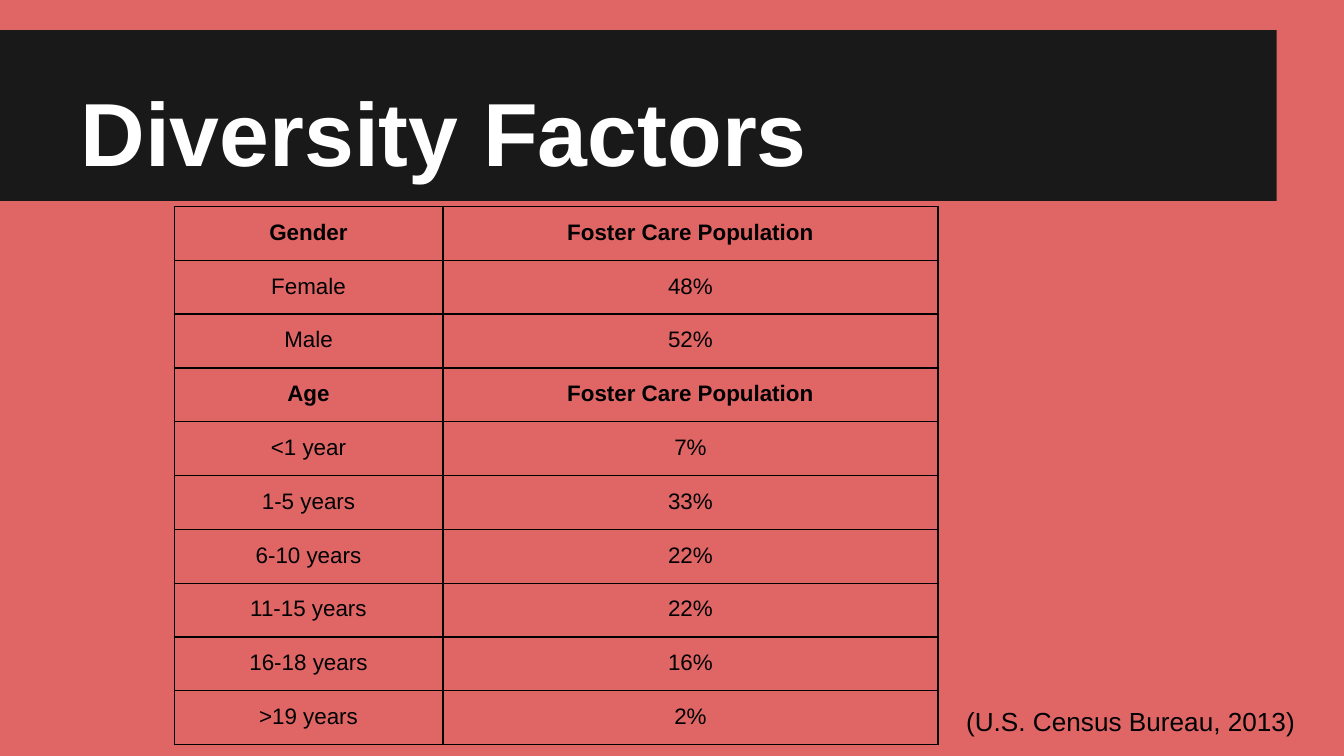
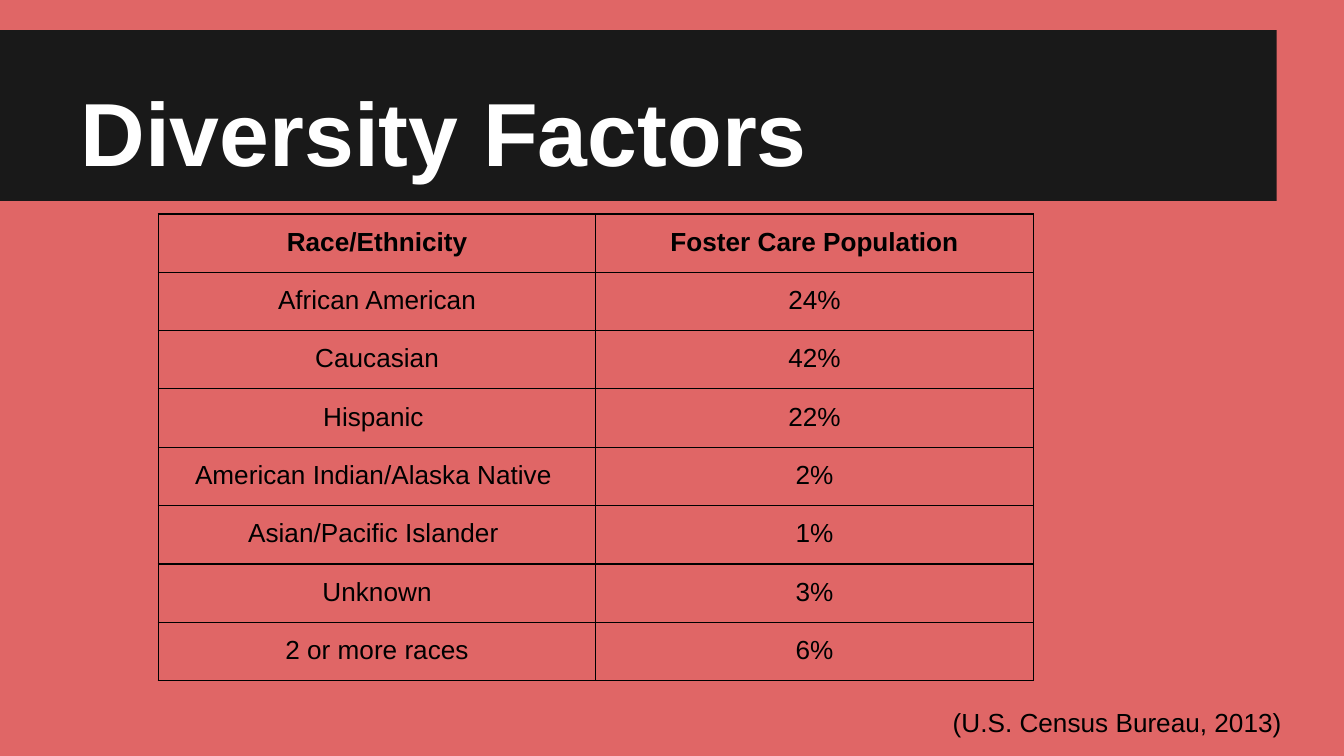
from lxml.etree import SubElement
from pptx import Presentation
from pptx.dml.color import RGBColor
from pptx.enum.shapes import MSO_SHAPE
from pptx.enum.text import MSO_ANCHOR, PP_ALIGN
from pptx.oxml.ns import qn
from pptx.util import Pt

# Content
TITLE = "Diversity Factors"
SOURCE = "(U.S. Census Bureau, 2013)"
SHARE = "Foster Care Population"
PAGES = [
    {
        "rows": [
            ("Gender", SHARE), ("Female", "48%"), ("Male", "52%"),
            ("Age", SHARE), ("<1 year", "7%"), ("1-5 years", "33%"),
            ("6-10 years", "22%"), ("11-15 years", "22%"),
            ("16-18 years", "16%"), (">19 years", "2%"),
        ],
        "at": (93.3, 110.6), "cols": (144, 265.2),
        "high": 27.8, "tall": {}, "size": 12,
        "note": (510.5, 370.8, 204.5, 30.2),
    },
    {
        "rows": [
            ("Race/Ethnicity", SHARE), ("African American", "24%"),
            ("Caucasian", "42%"), ("Hispanic ", "22%"),
            ("American Indian/Alaska Native ", "2%"),
            ("Asian/Pacific Islander ", "1%"), ("Unknown", "3%"),
            ("2 or more races", "6%"),
        ],
        "at": (84.8, 114.6), "cols": (234.4, 234.4),
        "high": 30, "tall": {4: 31.3, 5: 31.3}, "size": 14,
        "note": (503.3, 371, 195.8, 33.8),
    },
]

# Shared look
BACK, BAND, INK, WHITE = "E06666", "191919", "000000", "FFFFFF"
SIDES = ("a:lnL", "a:lnR", "a:lnT", "a:lnB")
PAD = {f"margin_{side}": Pt(7.2) for side in ("left", "top", "right", "bottom")}


def paint(fill, color):
    fill.solid()
    fill.fore_color.rgb = RGBColor.from_string(color)


def apply(item, form):
    for name, value in form.items():
        setattr(item, name, value)


def write(frame, text, size, color=INK, bold=False, align=PP_ALIGN.LEFT):
    line = frame.paragraphs[0]
    line.alignment = align
    run = line.add_run()
    run.text = text
    apply(run.font, {"name": "Arial", "size": Pt(size), "bold": bold})
    run.font.color.rgb = RGBColor.from_string(color)


def add_text(slide, box, text, size, anchor=MSO_ANCHOR.TOP, **form):
    frame = slide.shapes.add_textbox(*map(Pt, box)).text_frame
    apply(frame, {"word_wrap": True, "vertical_anchor": anchor, **PAD})
    write(frame, text, size, **form)


def add_edges(cell):
    props = cell._tc.get_or_add_tcPr()
    for side in SIDES:
        edge = SubElement(props, qn(side), w=str(Pt(0.75)))
        fill = SubElement(edge, qn("a:solidFill"))
        SubElement(fill, qn("a:srgbClr"), val=INK)


def add_grid(slide, page):
    rows, cols = page["rows"], page["cols"]
    highs = [page["tall"].get(i, page["high"]) for i in range(len(rows))]
    box = (*page["at"], sum(cols), sum(highs))
    grid = slide.shapes.add_table(len(rows), len(cols), *map(Pt, box)).table
    apply(grid, {"first_row": False, "horz_banding": False})
    for col, width in zip(grid.columns, cols):
        col.width = Pt(width)
    for row, high, texts in zip(grid.rows, highs, rows):
        row.height = Pt(high)
        for cell, text in zip(row.cells, texts):
            add_edges(cell)
            cell.fill.background()
            apply(cell, PAD)
            write(cell.text_frame, text, page["size"],
                  bold=texts[1] == SHARE, align=PP_ALIGN.CENTER)


def add_page(deck, page):
    slide = deck.slides.add_slide(deck.slide_layouts[6])
    paint(slide.background.fill, BACK)
    # Title band
    band = slide.shapes.add_shape(
        MSO_SHAPE.RECTANGLE, *map(Pt, (0, 16.2, 684, 91.5)))
    band.shadow.inherit = False
    paint(band.fill, BAND)
    band.line.fill.background()
    add_text(slide, (36, 16.2, 648, 90), TITLE, 48,
             anchor=MSO_ANCHOR.BOTTOM, color=WHITE, bold=True)
    # Table and source note
    add_grid(slide, page)
    add_text(slide, page["note"], SOURCE, 14)


def main():
    deck = Presentation()
    apply(deck, {"slide_width": Pt(720), "slide_height": Pt(405)})
    for page in PAGES:
        add_page(deck, page)
    deck.save("out.pptx")


if __name__ == "__main__":
    main()
